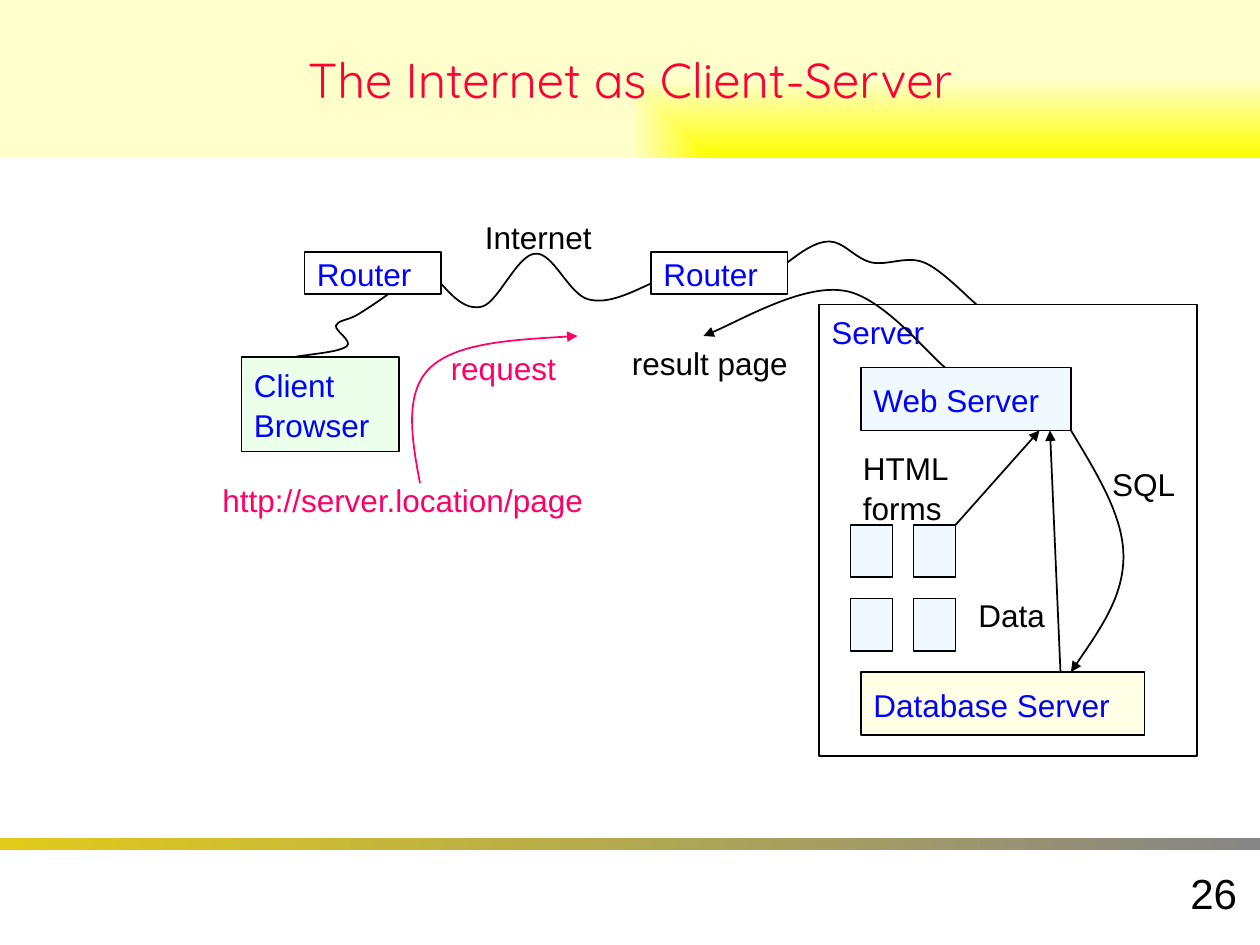
import pptx
import pptx.util
import pptx.dml.color
import pptx.enum.shapes
import pptx.enum.text
import pptx.oxml
import pptx.oxml.ns

Pt = pptx.util.Pt
RGBColor = pptx.dml.color.RGBColor
qn = pptx.oxml.ns.qn
SHAPE = pptx.enum.shapes.MSO_SHAPE
ALIGN = pptx.enum.text.PP_ALIGN
ANCHOR = pptx.enum.text.MSO_ANCHOR
AUTO = pptx.enum.text.MSO_AUTO_SIZE

BLACK = RGBColor(0x00, 0x00, 0x00)
BLUE = RGBColor(0x00, 0x00, 0xFF)
RED = RGBColor(0xFF, 0x00, 0x33)
PINK = RGBColor(0xFF, 0x00, 0x66)
MINT = RGBColor(0xEB, 0xFF, 0xEB)
ICE = RGBColor(0xEF, 0xF9, 0xFF)
CREAM = RGBColor(0xFF, 0xFF, 0xE5)
GOLD = RGBColor(0xE0, 0xCB, 0x1B)
GREY = RGBColor(0x86, 0x86, 0x86)
YELLOW = RGBColor(0xFF, 0xFF, 0x00)
PALE = RGBColor(0xFF, 0xFF, 0xCC)


class Diagram:
    font = "Arial"
    size = 18
    line_width = 1

    def __init__(self, slide):
        self.slide = slide
        self.shapes = slide.shapes

    def set_text(self, sp, text, color, align=ALIGN.LEFT, anchor=ANCHOR.TOP,
                 wrap=False, font=font, size=size, spacing=1.05):
        tf = sp.text_frame
        tf.text = text
        frame = {"auto_size": AUTO.NONE, "word_wrap": wrap, "vertical_anchor": anchor}
        for name, value in frame.items():
            setattr(tf, name, value)
        for p in tf.paragraphs:
            p.alignment, p.line_spacing = align, spacing
            for r in p.runs:
                for name, value in {"name": font, "size": Pt(size)}.items():
                    setattr(r.font, name, value)
                r.font.color.rgb = color

    def gradient(self, sp, start, end):
        sp.fill.gradient()
        sp.fill.gradient_angle = 0
        for stop, color in zip(sp.fill.gradient_stops, (start, end)):
            stop.color.rgb = color

    def outline(self, sp, color=BLACK, arrow=False):
        sp.line.color.rgb = color
        sp.line.width = Pt(self.line_width)
        if arrow:
            ln = sp._element.spPr.find(qn("a:ln"))
            ln.append(ln.makeelement(qn("a:tailEnd"), {"type": "triangle"}))

    def title(self, text, *box):
        sp = self.shapes.title
        sp.left, sp.top, sp.width, sp.height = map(Pt, box)
        self.gradient(sp, YELLOW, PALE)
        # Turn the linear gradient into one that spreads from the lower right corner
        grad = sp._element.spPr.find(qn("a:gradFill"))
        grad.replace(grad.find(qn("a:lin")), pptx.oxml.parse_xml(
            f'<a:path {pptx.oxml.ns.nsdecls("a")} path="rect">'
            '<a:fillToRect l="100000" t="100000"/></a:path>'))
        self.set_text(sp, text, RED, ALIGN.CENTER, ANCHOR.MIDDLE, True,
                      "Quicksand", 28, 1.0)

    def bar(self, *box):
        sp = self.shapes.add_shape(SHAPE.RECTANGLE, *map(Pt, box))
        sp.shadow.inherit = False
        self.gradient(sp, GOLD, GREY)
        sp.line.fill.background()

    def box(self, *box, fill=None, text=None, anchor=ANCHOR.MIDDLE):
        sp = self.shapes.add_shape(SHAPE.RECTANGLE, *map(Pt, box))
        sp.shadow.inherit = False
        if fill is None:
            sp.fill.background()
        else:
            sp.fill.solid()
            sp.fill.fore_color.rgb = fill
        self.outline(sp)
        if text:
            self.set_text(sp, text, BLUE, anchor=anchor)

    def label(self, text, *box, color=BLACK, **style):
        self.set_text(self.shapes.add_textbox(*map(Pt, box)), text, color, **style)

    def curve(self, *points, color=BLACK, arrow=False):
        """Draw a start point followed by Bezier triples: control, control, end."""
        start, *rest = [(Pt(x), Pt(y)) for x, y in points]
        builder = self.shapes.build_freeform(*start)
        builder.add_line_segments(rest, close=False)
        sp = builder.convert_to_shape()
        sp.shadow.inherit = False
        sp.fill.background()
        self.outline(sp, color, arrow)
        segments = list(sp._element.iter(qn("a:lnTo")))
        outline = segments[0].getparent()
        for i in range(0, len(segments), 3):
            bezier = outline.makeelement(qn("a:cubicBezTo"), {})
            outline.append(bezier)
            for segment in segments[i:i + 3]:
                bezier.append(segment[0])
                outline.remove(segment)

    def arrow(self, *ends):
        sp = self.shapes.add_connector(
            pptx.enum.shapes.MSO_CONNECTOR.STRAIGHT, *map(Pt, ends))
        self.outline(sp, arrow=True)
        spPr = sp._element.spPr
        spPr.append(spPr.makeelement(qn("a:effectLst"), {}))


def main():
    prs = pptx.Presentation()
    prs.slide_width, prs.slide_height = Pt(720), Pt(540)
    d = Diagram(prs.slides.add_slide(prs.slide_layouts[5]))

    d.bar(0, 479, 720, 7)
    d.title("The Internet as Client-Server", 0, 0, 720, 90)
    d.label("26", 564, 492, 150, 36, align=ALIGN.RIGHT, anchor=ANCHOR.MIDDLE,
            wrap=True, size=24, spacing=1.0)

    d.box(138, 204, 90, 54, fill=MINT, text="Client\nBrowser")
    d.box(468, 174, 216, 258, text="Server", anchor=ANCHOR.TOP)
    d.box(492, 210, 120, 36, fill=ICE, text="Web Server")
    for x in (174, 372):
        d.box(x, 144, 78, 24, text="Router")

    # Network links: client to router, router to server, router to router
    d.curve((168, 204), (181, 202), (194, 201), (198, 198),
            (202, 195), (191, 189), (192, 186),
            (193, 183), (199, 183), (204, 180),
            (209, 177), (215, 173), (222, 168))
    d.curve((558, 174), (553, 170), (538, 154), (528, 150),
            (518, 146), (507, 152), (498, 150),
            (489, 148), (482, 138), (474, 138),
            (466, 138), (458, 144), (450, 150))
    d.curve((252, 162), (259, 170), (267, 178), (276, 175),
            (285, 172), (296, 145), (306, 145),
            (316, 144), (325, 168), (336, 171),
            (347, 174), (359, 168), (372, 162))
    d.label("Internet", 270, 120, 76, 29)

    for y in (300, 342):
        for x in (486, 522):
            d.box(x, y, 24, 30, fill=ICE)
    d.label("HTML forms", 486, 252, 66, 50, wrap=True)

    d.label("http://server.location/page", 120, 270, 222, 29, color=PINK)
    d.curve((240, 276), (235, 250), (231, 224), (246, 210),
            (261, 196), (295, 194), (330, 192), color=PINK, arrow=True)
    d.label("request", 250.5, 195, 74, 29, color=PINK)

    d.box(492, 384, 162, 36, fill=CREAM, text="Database Server")
    d.curve((612, 246), (627, 271), (642, 295), (642, 318),
            (642, 341), (627, 362), (612, 384), arrow=True)
    d.label("SQL", 628.5, 261, 50, 29)
    d.arrow(606, 384, 600, 246)
    d.arrow(546, 300, 594, 246)
    d.curve((540, 210), (530, 202), (503, 168), (481, 166),
            (458, 163), (418, 186), (402, 192), arrow=True)
    d.label("result page", 354, 192, 104, 29)
    d.label("Data", 552, 336, 52.5, 29)

    prs.save("out.pptx")


if __name__ == "__main__":
    main()
